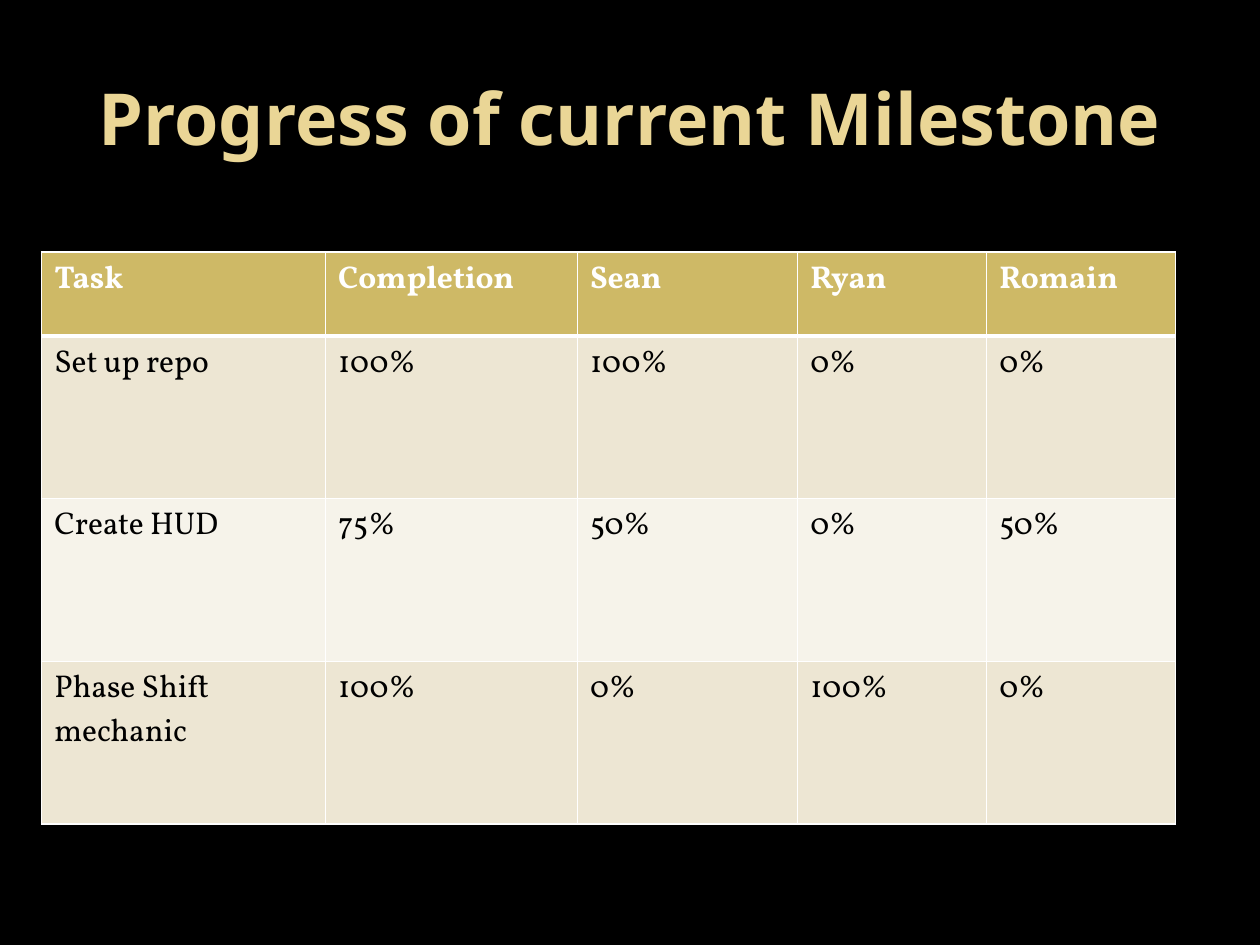
"""Build the milestone progress slide with its task table."""
from lxml.etree import SubElement
from pptx import Presentation
from pptx.dml.color import RGBColor
from pptx.enum.text import MSO_ANCHOR, PP_ALIGN
from pptx.oxml.ns import qn
from pptx.util import Cm, Pt

TITLE = "Progress of current Milestone"
ROWS = [
    ("Task", "Completion", "Sean", "Ryan", "Romain"),
    ("Set up repo", "100%", "100%", "0%", "0%"),
    ("Create HUD", "75%", "50%", "0%", "50%"),
    ("Phase Shift mechanic", "100%", "0%", "100%", "0%"),
]
COL_WIDTHS = (5.72, 5.08, 4.44, 3.81, 3.81)
HEADER_HEIGHT, BODY_HEIGHT = 1.69, 3.28
COLORS = {
    "background": "000000",
    "title": "EAD696",
    "header": "CEB966",
    "odd": "EDE6D3",
    "even": "F6F3EA",
    "border": "FFFFFF",
    "header_text": "FFFFFF",
    "body_text": "000000",
}


def color(name):
    return RGBColor.from_string(COLORS[name])


def style_run(r, font, size, name, bold):
    r.font.name, r.font.size, r.font.bold = font, Pt(size), bold
    r.font.color.rgb = color(name)


def set_borders(cell, widths):
    tc_pr = cell._tc.get_or_add_tcPr()
    for side, width in zip("LRTB", widths):
        ln = SubElement(tc_pr, qn(f"a:ln{side}"), w=str(Pt(width)))
        fill = SubElement(ln, qn("a:solidFill"))
        SubElement(fill, qn("a:srgbClr"), val=COLORS["border"])


def add_title(s):
    sp = s.shapes.add_textbox(Cm(1.27), Cm(0.76), Cm(22.86), Cm(3.18))
    tf = sp.text_frame
    tf.word_wrap = True
    tf.vertical_anchor = MSO_ANCHOR.MIDDLE
    tf.text = TITLE
    p = tf.paragraphs[0]
    p.alignment = PP_ALIGN.CENTER
    style_run(p.runs[0], "Noto Sans", 41, "title", True)


def add_progress_table(s):
    heights = [HEADER_HEIGHT] + [BODY_HEIGHT] * (len(ROWS) - 1)
    table = s.shapes.add_table(
        len(ROWS), len(COL_WIDTHS), Cm(0.84), Cm(5.08),
        Cm(sum(COL_WIDTHS)), Cm(sum(heights))).table
    for col, width in zip(table.columns, COL_WIDTHS):
        col.width = Cm(width)
    for i, (row, height, texts) in enumerate(zip(table.rows, heights, ROWS)):
        row.height = Cm(height)
        header = i == 0
        fill = "header" if header else "odd" if i % 2 else "even"
        text_color = "header_text" if header else "body_text"
        for cell, text in zip(row.cells, texts):
            set_borders(cell, (1, 1, 3 if i == 1 else 1, 3 if header else 1))
            cell.fill.solid()
            cell.fill.fore_color.rgb = color(fill)
            cell.text_frame.text = text
            r = cell.text_frame.paragraphs[0].runs[0]
            style_run(r, "Vollkorn", 18, text_color, header)


def main():
    prs = Presentation()
    prs.slide_width, prs.slide_height = Cm(25.4), Cm(19.05)
    s = prs.slides.add_slide(prs.slide_layouts[6])
    s.background.fill.solid()
    s.background.fill.fore_color.rgb = color("background")
    add_title(s)
    add_progress_table(s)
    prs.save("out.pptx")


if __name__ == "__main__":
    main()
